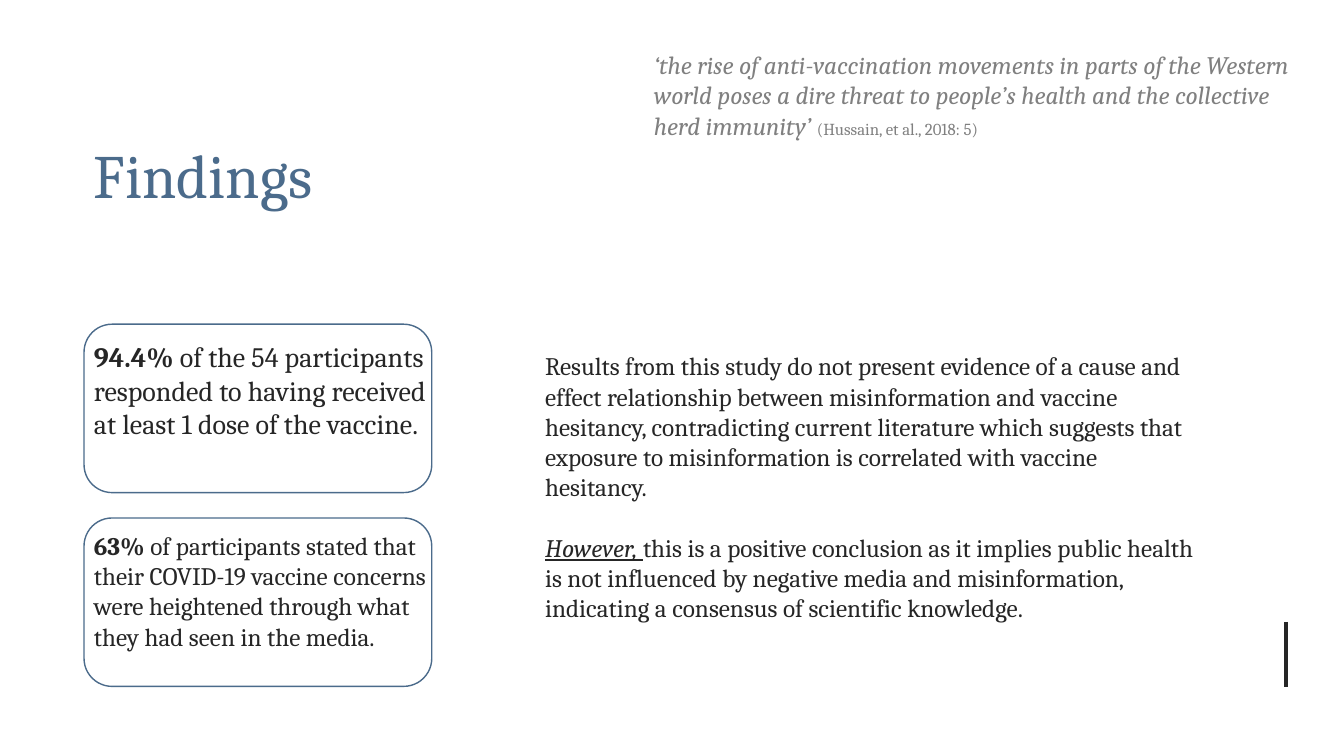
from pptx import Presentation
from pptx.dml.color import RGBColor
from pptx.enum.shapes import MSO_CONNECTOR, MSO_SHAPE
from pptx.enum.text import MSO_ANCHOR
from pptx.oxml.ns import qn
from pptx.util import Pt
from lxml import etree

ROUNDED = MSO_SHAPE.ROUNDED_RECTANGLE
STRAIGHT = MSO_CONNECTOR.STRAIGHT
TOP, MIDDLE = MSO_ANCHOR.TOP, MSO_ANCHOR.MIDDLE

FONT = "Cambria"
BLUE, DARK, GREY = "4B6B8B", "262626", "808080"
LEFT = 60

TITLE = [[("Findings", {})]]
QUOTE = [[
    ("‘the rise of anti-vaccination movements in parts of the Western world poses "
     "a dire threat to people’s health and the collective herd immunity’ ", {"italic": True}),
    ("(Hussain, et al., 2018: 5)", {"size": Pt(12)}),
]]
VACCINATED = [[
    ("94.4% ", {"bold": True}),
    ("of the 54 participants responded to having received at least 1 dose of the vaccine.", {}),
]]
CONCERNED = [[
    ("63% ", {"bold": True}),
    ("of participants stated that their COVID-19 vaccine concerns were heightened "
     "through what they had seen in the media.", {}),
]]
CONCLUSION = [
    [("Results from this study do not present evidence of a cause and effect relationship "
      "between misinformation and vaccine hesitancy, contradicting current literature which "
      "suggests that exposure to misinformation is correlated with vaccine hesitancy.", {})],
    [("However, ", {"italic": True, "underline": True}),
     ("this is a positive conclusion as it implies public health is not influenced by negative "
      "media and misinformation, indicating a consensus of scientific knowledge.", {})],
]

TEXTS = [
    (TITLE, (LEFT, 67.7, 817.2, 113), 44, BLUE, MIDDLE),
    (QUOTE, (460, 31.7, 476.6, 72.7), 18, GREY, TOP),
    (VACCINATED, (LEFT, 239, 259.2, 104.4), 20, DARK, TOP),
    (CONCERNED, (LEFT, 375.1, 254.2, 116.6), 18, DARK, TOP),
    (CONCLUSION, (382.3, 247, 480.2, 247), 18, DARK, TOP),
]
FRAME_TOPS = [231.6, 370]
FRAME_SIZE = (248.4, 120.3)
ACCENT_X, ACCENT_TOP, ACCENT_BOTTOM = 918.7, 444.2, 491


def color(code):
    return RGBColor.from_string(code)


def add_frame(page, top):
    frame = page.shapes.add_shape(ROUNDED, Pt(LEFT), Pt(top), *map(Pt, FRAME_SIZE))
    frame.shadow.inherit = False
    frame.fill.background()
    frame.line.color.rgb = color(BLUE)
    frame.line.width = Pt(1)


def add_text(page, paragraphs, place, size, code, anchor):
    box = page.shapes.add_textbox(*map(Pt, place))
    frame = box.text_frame
    frame.word_wrap = True
    frame.vertical_anchor = anchor
    for index, spans in enumerate(paragraphs):
        para = frame.add_paragraph() if index else frame.paragraphs[0]
        para.font.name = FONT
        para.font.size = Pt(size)
        para.font.color.rgb = color(code)
        if index:
            para.space_before = Pt(size * 1.2)
        for words, style in spans:
            span = para.add_run()
            span.text = words
            span.font.name = FONT
            span.font.size = Pt(size)
            span.font.color.rgb = color(code)
            for name, value in style.items():
                setattr(span.font, name, value)


def add_accent(page):
    accent = page.shapes.add_connector(
        STRAIGHT, Pt(ACCENT_X), Pt(ACCENT_TOP), Pt(ACCENT_X), Pt(ACCENT_BOTTOM))
    accent.line.color.rgb = color(DARK)
    accent.line.width = Pt(3)
    etree.SubElement(accent._element.spPr, qn("a:effectLst"))


def main():
    deck = Presentation()
    deck.slide_width, deck.slide_height = Pt(960), Pt(540)
    page = deck.slides.add_slide(deck.slide_layouts[6])
    add_accent(page)
    for top in FRAME_TOPS:
        add_frame(page, top)
    for text in TEXTS:
        add_text(page, *text)
    deck.save("out.pptx")


if __name__ == "__main__":
    main()
